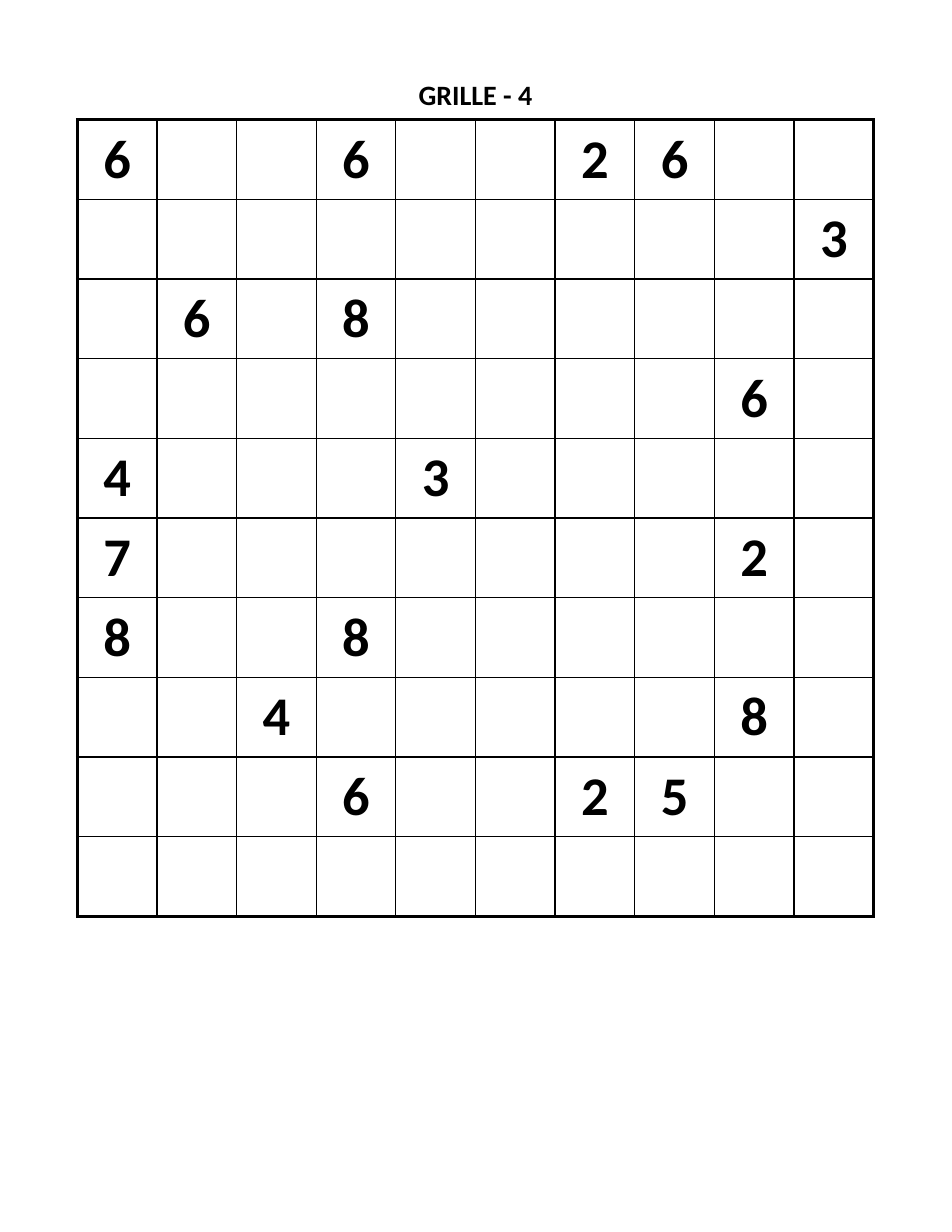
"""Draw a ten by ten number puzzle grid under its heading."""
from dataclasses import dataclass

from lxml.etree import SubElement
from pptx import Presentation
from pptx.dml.color import RGBColor
from pptx.enum.text import MSO_ANCHOR, PP_ALIGN
from pptx.oxml.ns import qn
from pptx.slide import Slide
from pptx.table import _Cell
from pptx.text.text import TextFrame
from pptx.util import Pt

BLACK = RGBColor(0x00, 0x00, 0x00)
WHITE = RGBColor(0xFF, 0xFF, 0xFF)
FONT = "Calibri"
LEFT = 49.68
TITLE_TOP, TITLE_HEIGHT, TITLE_SIZE = 49.68, 21.6, 18
GRID_TOP, CELL_SIDE, DIGIT_SIZE = 77.04, 51.2, 35
INNER_LINE, OUTER_LINE = 1, 2
ROWS = (
    "6..6..26..",
    ".........3",
    ".6.8......",
    "........6.",
    "4...3.....",
    "7.......2.",
    "8..8......",
    "..4.....8.",
    "...6..25..",
    "..........",
)
COUNT = len(ROWS)
GRID_SIDE = COUNT * CELL_SIDE


@dataclass(frozen=True)
class Square:
    row: int
    column: int
    digit: str

    def borders(self) -> dict[str, int]:
        last = COUNT - 1
        on_edge = {
            "a:lnL": self.column == 0,
            "a:lnR": self.column == last,
            "a:lnT": self.row == 0,
            "a:lnB": self.row == last,
        }
        return {tag: OUTER_LINE if edge else INNER_LINE for tag, edge in on_edge.items()}


def write_centred(frame: TextFrame, text: str, size: float) -> None:
    para = frame.paragraphs[0]
    para.alignment = PP_ALIGN.CENTER
    span = para.add_run()
    span.text = text
    span.font.name = FONT
    span.font.size = Pt(size)
    span.font.bold = True
    span.font.color.rgb = BLACK


def clear_margins(holder: TextFrame | _Cell) -> None:
    holder.margin_left = holder.margin_right = 0
    holder.margin_top = holder.margin_bottom = 0


def draw_title(page: Slide, text: str) -> None:
    box = page.shapes.add_textbox(Pt(LEFT), Pt(TITLE_TOP), Pt(GRID_SIDE), Pt(TITLE_HEIGHT))
    frame = box.text_frame
    frame.word_wrap = True
    clear_margins(frame)
    write_centred(frame, text, TITLE_SIZE)


def draw_square(cell: _Cell, square: Square) -> None:
    clear_margins(cell)
    cell.vertical_anchor = MSO_ANCHOR.MIDDLE
    properties = cell._tc.get_or_add_tcPr()
    for tag, width in square.borders().items():
        line = SubElement(properties, qn(tag), w=str(Pt(width)))
        fill = SubElement(line, qn("a:solidFill"))
        SubElement(fill, qn("a:srgbClr"), val=str(BLACK))
    cell.fill.solid()
    cell.fill.fore_color.rgb = WHITE
    if square.digit != ".":
        write_centred(cell.text_frame, square.digit, DIGIT_SIZE)


def draw_grid(page: Slide) -> None:
    table = page.shapes.add_table(
        COUNT, COUNT, Pt(LEFT), Pt(GRID_TOP), Pt(GRID_SIDE), Pt(GRID_SIDE)
    ).table
    table.first_row = False
    table.horz_banding = False
    for column in table.columns:
        column.width = Pt(CELL_SIDE)
    for row in table.rows:
        row.height = Pt(CELL_SIDE)
    for row, digits in enumerate(ROWS):
        for column, digit in enumerate(digits):
            draw_square(table.cell(row, column), Square(row, column, digit))


def main() -> None:
    deck = Presentation()
    deck.slide_width, deck.slide_height = Pt(612), Pt(792)
    page = deck.slides.add_slide(deck.slide_layouts[6])
    draw_title(page, "GRILLE - 4")
    draw_grid(page)
    deck.save("out.pptx")


if __name__ == "__main__":
    main()
